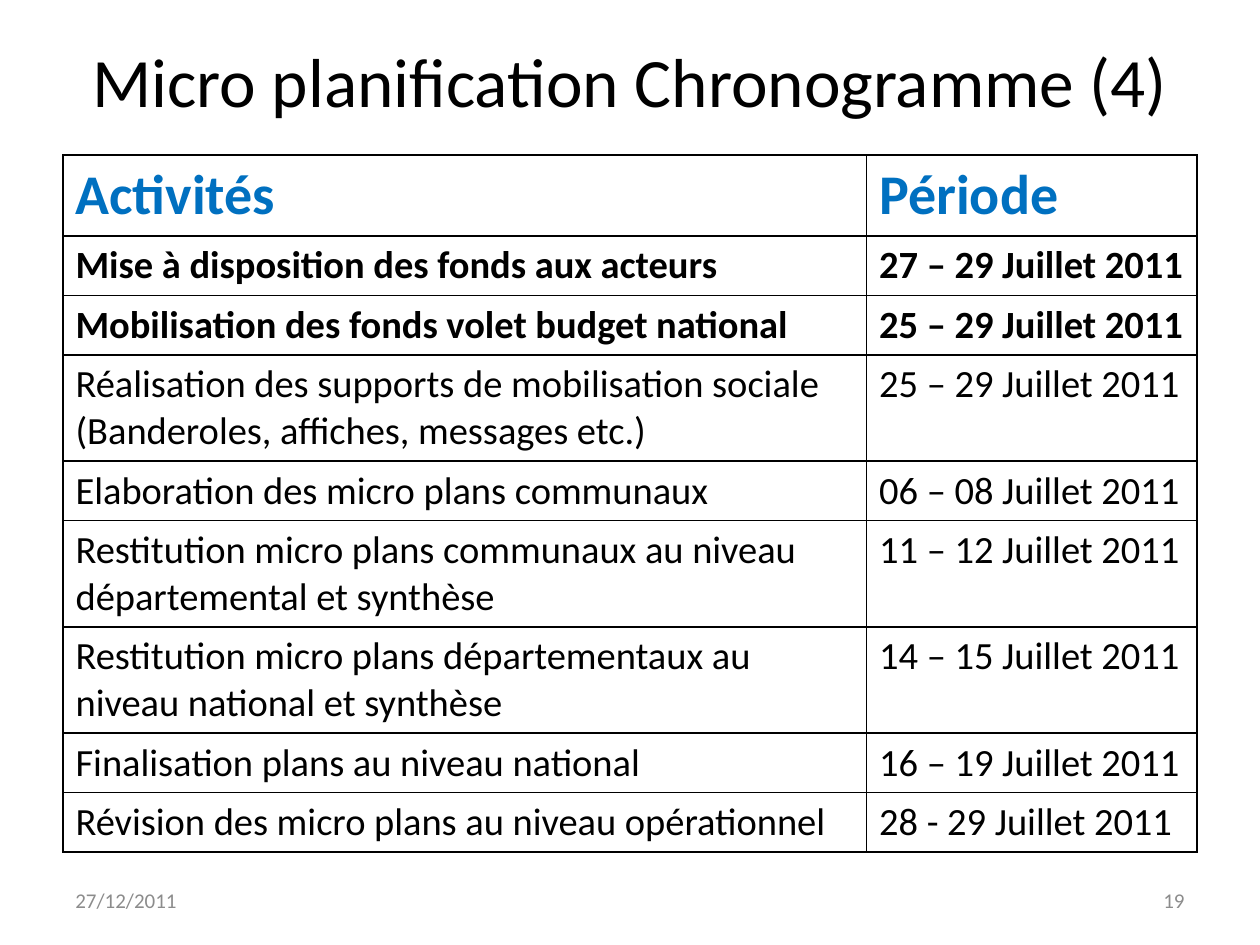
from pptx import Presentation, util as u
from pptx.dml.color import RGBColor
from pptx.enum import text
from pptx.oxml import parse_xml
from pptx.oxml.ns import nsdecls

TITLE = "Micro planification Chronogramme (4)"
HEADINGS = ("Activités", "Période")
ACTIVITIES = [
    ("Mise à disposition des fonds aux acteurs", "27 – 29 Juillet 2011"),
    ("Mobilisation des fonds volet budget national", "25 – 29 Juillet 2011"),
    ("Réalisation des supports de mobilisation sociale (Banderoles, affiches, messages etc.)",
     "25 – 29 Juillet 2011"),
    ("Elaboration des micro plans communaux", "06 – 08 Juillet 2011"),
    ("Restitution micro plans communaux au niveau départemental et synthèse",
     "11 – 12 Juillet 2011"),
    ("Restitution micro plans départementaux au niveau national et synthèse",
     "14 – 15 Juillet 2011"),
    ("Finalisation plans au niveau national", "16 – 19 Juillet 2011"),
    ("Révision des micro plans au niveau opérationnel", "28 - 29 Juillet 2011"),
]
BOLD_ROWS = 2


def color(value):
    """Turn a hex string into a colour."""
    return RGBColor.from_string(value)


def write(frame, content, size=22, bold=False, fill="000000", font="Calibri",
          align=text.PP_ALIGN.LEFT):
    """Put formatted text into a text frame."""
    frame.word_wrap = True
    paragraph = frame.paragraphs[0]
    paragraph.alignment = align
    run = paragraph.add_run()
    run.text = content
    run.font.size = u.Pt(size)
    run.font.bold = bold
    run.font.name = font
    run.font.color.rgb = color(fill)


class SlideBuilder:
    """Hold the style and the current slide."""

    black, white, accent, muted = "000000", "FFFFFF", "0070C0", "8C8C8C"
    margin, width = u.Cm(1.27), u.Cm(22.86)
    row_height = u.Cm(1.04)

    def __init__(self, presentation):
        """Add a title-only slide."""
        self.slide = presentation.slides.add_slide(presentation.slide_layouts[5])

    def title(self, content, top, height):
        """Place and fill the title placeholder."""
        shape = self.slide.shapes.title
        shape.left, shape.top, shape.width, shape.height = self.margin, top, self.width, height
        shape.text_frame.vertical_anchor = text.MSO_ANCHOR.MIDDLE
        write(shape.text_frame, content, size=39.6, align=text.PP_ALIGN.CENTER)

    def cell(self, cell, content, anchor=text.MSO_ANCHOR.TOP, **style):
        """Fill a table cell and draw its borders."""
        cell.fill.solid()
        cell.fill.fore_color.rgb = color(self.white)
        cell.vertical_anchor = anchor
        write(cell.text_frame, content, **style)
        properties = cell._tc.get_or_add_tcPr()
        for index, side in enumerate("LRTB"):
            properties.insert(index, parse_xml(
                f'<a:ln{side} {nsdecls("a")} w="12700"><a:solidFill>'
                f'<a:srgbClr val="{self.black}"/></a:solidFill></a:ln{side}>'))

    def table(self, headings, rows, column_widths, top, height):
        """Add the schedule table."""
        shape = self.slide.shapes.add_table(
            len(rows) + 1, len(headings), self.margin, top, self.width, height)
        table = shape.table
        for column, width in zip(table.columns, column_widths):
            column.width = width
        for row in table.rows:
            row.height = self.row_height
        shape.height = height
        for index, heading in enumerate(headings):
            self.cell(table.cell(0, index), heading, size=32, bold=True, fill=self.accent)
        for index, (activity, period) in enumerate(rows, 1):
            bold = index <= BOLD_ROWS
            self.cell(table.cell(index, 0), activity, text.MSO_ANCHOR.MIDDLE, bold=bold)
            self.cell(table.cell(index, 1), period, bold=bold)

    def footer(self, content, left, align):
        """Add a small grey text at the foot of the slide."""
        shape = self.slide.shapes.add_textbox(left, u.Cm(17.65), u.Cm(5.93), u.Cm(1.01))
        shape.text_frame.vertical_anchor = text.MSO_ANCHOR.MIDDLE
        write(shape.text_frame, content, size=12, fill=self.muted, align=align)


def main():
    """Build and save the schedule slide."""
    presentation = Presentation()
    presentation.slide_width, presentation.slide_height = u.Cm(25.4), u.Cm(19.05)
    builder = SlideBuilder(presentation)
    builder.title(TITLE, u.Cm(0.41), u.Cm(2.41))
    builder.table(HEADINGS, ACTIVITIES, (u.Cm(16.2), u.Cm(6.66)), u.Cm(3.12), u.Cm(13.94))
    builder.footer("27/12/2011", builder.margin, text.PP_ALIGN.LEFT)
    builder.footer("19", u.Cm(18.2), text.PP_ALIGN.RIGHT)
    presentation.save("out.pptx")


if __name__ == "__main__":
    main()
